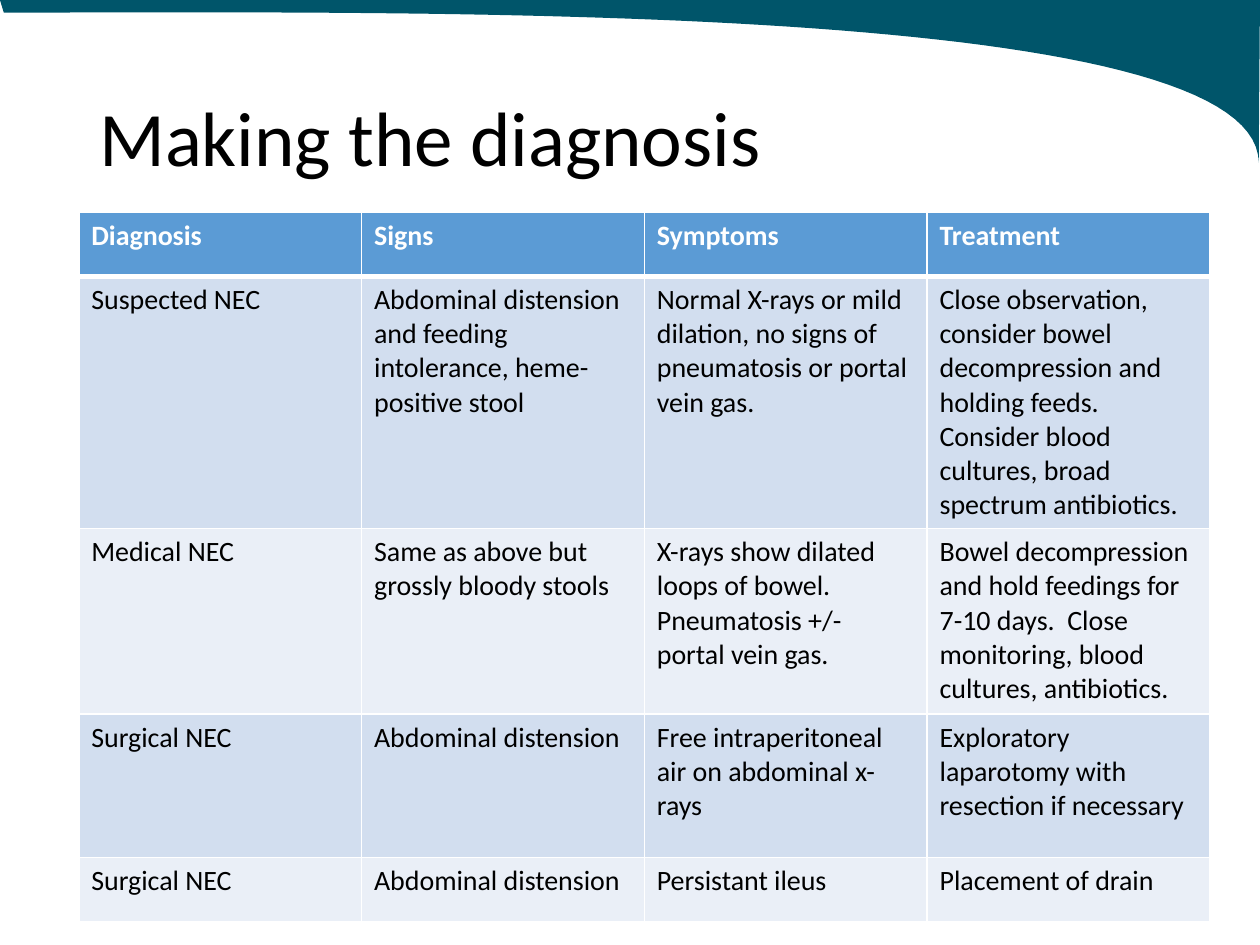
import pptx
import pptx.util
import pptx.dml.color
import pptx.enum.text
import pptx.oxml
import pptx.oxml.ns

Pt = pptx.util.Pt
RGB = pptx.dml.color.RGBColor
TEAL = RGB(0x00, 0x55, 0x6A)
BLUE = RGB(0x5B, 0x9B, 0xD5)
BAND_DARK = RGB(0xD2, 0xDE, 0xEF)
BAND_LIGHT = RGB(0xEA, 0xEF, 0xF7)
WHITE = RGB(0xFF, 0xFF, 0xFF)
BLACK = RGB(0x00, 0x00, 0x00)
FONT = "Calibri"

ROWS = [
    ["Diagnosis", "Signs", "Symptoms", "Treatment"],
    ["Suspected NEC",
     "Abdominal distension and feeding intolerance, heme-positive stool",
     "Normal X-rays or mild dilation, no signs of pneumatosis or portal vein gas.",
     "Close observation, consider bowel decompression and holding feeds. "
     "Consider blood cultures, broad spectrum antibiotics."],
    ["Medical NEC",
     "Same as above but grossly bloody stools",
     "X-rays show dilated loops of bowel.  Pneumatosis +/- portal vein gas.",
     "Bowel decompression and hold feedings for 7-10 days.  "
     "Close monitoring, blood cultures, antibiotics."],
    ["Surgical NEC", "Abdominal distension",
     "Free intraperitoneal air on abdominal x-rays",
     "Exploratory laparotomy with resection if necessary"],
    ["Surgical NEC", "Abdominal distension", "Persistant ileus", "Placement of drain"],
]
ROW_HEIGHTS = [36.5, 106, 106, 82, 36.5]


def add_border(cell, side, width):
    """Add one white cell border; call in the order L, R, T, B."""
    tcPr = cell._tc.get_or_add_tcPr()
    tcPr.append(pptx.oxml.parse_xml(
        f'<a:ln{side} {pptx.oxml.ns.nsdecls("a")} w="{Pt(width)}">'
        f'<a:solidFill><a:srgbClr val="{WHITE}"/></a:solidFill></a:ln{side}>'))


prs = pptx.Presentation()
prs.slide_width, prs.slide_height = Pt(720), Pt(540)
s = prs.slides.add_slide(prs.slide_layouts[5])

# Curved corner band: a cubic curve sampled in short segments
curve = [(719.3, 92.9), (718.6, 0), (241.9, 7.2), (2.2, 7.2)]
STEPS = 60
points = [(Pt(720), Pt(0))]
for i in range(STEPS + 1):
    t = i / STEPS
    weights = [(1 - t) ** 3, 3 * t * (1 - t) ** 2, 3 * t ** 2 * (1 - t), t ** 3]
    points.append(tuple(Pt(sum(w * pt[axis] for w, pt in zip(weights, curve)))
                        for axis in (0, 1)))
builder = s.shapes.build_freeform(0, 0)
builder.add_line_segments(points, close=True)
band = builder.convert_to_shape()
band.shadow.inherit = False
band.fill.solid()
band.fill.fore_color.rgb = TEAL
band.line.fill.background()
s.shapes._spTree.insert(2, band._element)  # behind the title

# Title
title = s.shapes.title
title.left, title.top, title.width, title.height = Pt(49.5), Pt(28.75), Pt(621), Pt(104.4)
tf = title.text_frame
tf.text = "Making the diagnosis"
tf.word_wrap = True
tf.auto_size = pptx.enum.text.MSO_AUTO_SIZE.NONE
tf.vertical_anchor = pptx.enum.text.MSO_ANCHOR.MIDDLE
p = tf.paragraphs[0]
p.alignment = pptx.enum.text.PP_ALIGN.LEFT
p.line_spacing = 0.9
p.font.name, p.font.size = FONT, Pt(44)
p.font.color.rgb = BLACK

# Table
table = s.shapes.add_table(len(ROWS), len(ROWS[0]), Pt(45), Pt(121.5),
                           Pt(646.4), Pt(sum(ROW_HEIGHTS))).table
for col in table.columns:
    col.width = Pt(161.6)
for i, (row, height) in enumerate(zip(ROWS, ROW_HEIGHTS)):
    table.rows[i].height = Pt(height)
    header = i == 0
    fill = BLUE if header else BAND_DARK if i % 2 else BAND_LIGHT
    for j, text in enumerate(row):
        cell = table.cell(i, j)
        add_border(cell, "L", 1)
        add_border(cell, "R", 1)
        add_border(cell, "T", 3 if i == 1 else 1)
        add_border(cell, "B", 3 if header else 1)
        cell.fill.solid()
        cell.fill.fore_color.rgb = fill
        cell.text_frame.text = text
        r = cell.text_frame.paragraphs[0].runs[0]
        r.font.name, r.font.size, r.font.bold = FONT, Pt(16), header
        r.font.color.rgb = WHITE if header else BLACK

prs.save("out.pptx")
